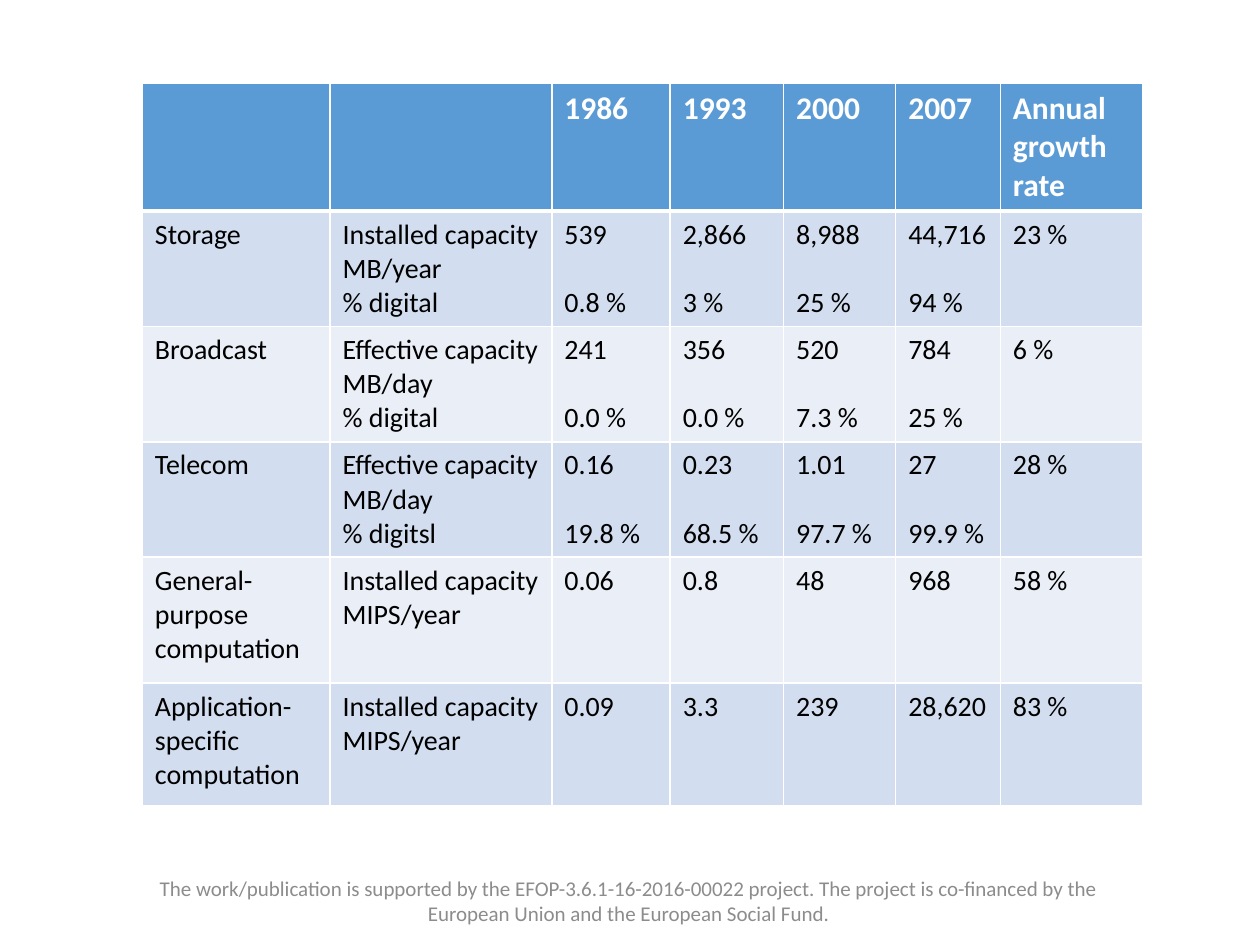
"""Build a slide with a table of world information capacity and a funding note."""
from lxml.etree import SubElement
from pptx import Presentation
from pptx.dml.color import RGBColor
from pptx.enum.text import MSO_ANCHOR, PP_ALIGN
from pptx.oxml.ns import qn
from pptx.util import Inches, Pt

WHITE = RGBColor(0xFF, 0xFF, 0xFF)
BLACK = RGBColor(0, 0, 0)
GRAY = RGBColor(0x8C, 0x8C, 0x8C)
HEADER_BLUE = RGBColor(0x5B, 0x9B, 0xD5)
BAND_DARK = RGBColor(0xD2, 0xDE, 0xEF)
BAND_LIGHT = RGBColor(0xEA, 0xEF, 0xF7)

COLUMN_WIDTHS = [1.49, 1.76, 0.94, 0.9, 0.89, 0.83, 1.13]
ROW_HEIGHTS = [1.01, 0.91, 0.91, 0.91, 1, 0.97]
LINE_GAP = 19.5
CAPACITIES = [
    ["", "", "1986", "1993", "2000", "2007", "Annual growth rate"],
    ["Storage", "Installed capacity MB/year\n% digital", "539\n0.8 %",
     "2,866\n3 %", "8,988\n25 %", "44,716\n94 %", "23 %"],
    ["Broadcast", "Effective capacity MB/day\n% digital", "241\n0.0 %",
     "356\n0.0 %", "520\n7.3 %", "784\n25 %", "6 %"],
    ["Telecom", "Effective capacity MB/day\n% digitsl", "0.16\n19.8 %",
     "0.23\n68.5 %", "1.01\n97.7 %", "27\n99.9 %", "28 %"],
    ["General-purpose computation", "Installed capacity MIPS/year",
     "0.06", "0.8", "48", "968", "58 %"],
    ["Application-specific computation", "Installed capacity MIPS/year",
     "0.09", "3.3", "239", "28,620", "83 %"],
]
FUNDING = ("The work/publication is supported by the EFOP-3.6.1-16-2016-00022 "
           "project. The project is co-financed by the European Union and the "
           "European Social Fund.")


def write_text(frame, text, size=16, color=BLACK, bold=False,
               align=PP_ALIGN.LEFT, gap=0):
    """Write one paragraph per line, with a gap in points between them."""
    frame.word_wrap = True
    for index, line in enumerate(text.split("\n")):
        paragraph = frame.add_paragraph() if index else frame.paragraphs[0]
        paragraph.alignment = align
        if index and gap:
            paragraph.space_before = Pt(gap)
        paragraph.font.size = Pt(size)
        if line:
            run = paragraph.add_run()
            run.text = line
            run.font.name = "Calibri"
            run.font.size = Pt(size)
            run.font.bold = bold
            run.font.color.rgb = color


def set_borders(cell, top, bottom):
    """Give a cell white borders, with top and bottom widths in points."""
    properties = cell._tc.get_or_add_tcPr()
    for side, width in (("L", 1), ("R", 1), ("T", top), ("B", bottom)):
        border = SubElement(properties, qn(f"a:ln{side}"), w=str(Pt(width)))
        fill = SubElement(border, qn("a:solidFill"))
        SubElement(fill, qn("a:srgbClr"), val=str(WHITE))


def add_capacity_table(slide):
    """Add the banded table of capacities by year."""
    table = slide.shapes.add_table(
        len(ROW_HEIGHTS), len(COLUMN_WIDTHS), Inches(1.13), Inches(0.66),
        Inches(sum(COLUMN_WIDTHS)), Inches(sum(ROW_HEIGHTS))).table
    for column, width in zip(table.columns, COLUMN_WIDTHS):
        column.width = Inches(width)
    for row_index, (row, height) in enumerate(zip(table.rows, ROW_HEIGHTS)):
        row.height = Inches(height)
        header = row_index == 0
        band = BAND_DARK if row_index % 2 else BAND_LIGHT
        for column_index, cell in enumerate(row.cells):
            set_borders(cell, top=3 if row_index == 1 else 1,
                        bottom=3 if header else 1)
            cell.fill.solid()
            cell.fill.fore_color.rgb = HEADER_BLUE if header else band
            write_text(cell.text_frame, CAPACITIES[row_index][column_index],
                       size=18 if header else 16, bold=header,
                       color=WHITE if header else BLACK,
                       gap=LINE_GAP if column_index > 1 else 0)


def add_funding_note(slide):
    """Add the centred funding note at the foot of the slide."""
    note = slide.shapes.add_textbox(Inches(1.13), Inches(6.95),
                                    Inches(7.72), Inches(0.4))
    note.text_frame.vertical_anchor = MSO_ANCHOR.MIDDLE
    write_text(note.text_frame, FUNDING, size=12, color=GRAY,
               align=PP_ALIGN.CENTER)


def main():
    """Build and save the slide."""
    presentation = Presentation()
    presentation.slide_width = Inches(10)
    presentation.slide_height = Inches(7.5)
    slide = presentation.slides.add_slide(presentation.slide_layouts[6])
    add_capacity_table(slide)
    add_funding_note(slide)
    presentation.save("out.pptx")


if __name__ == "__main__":
    main()
